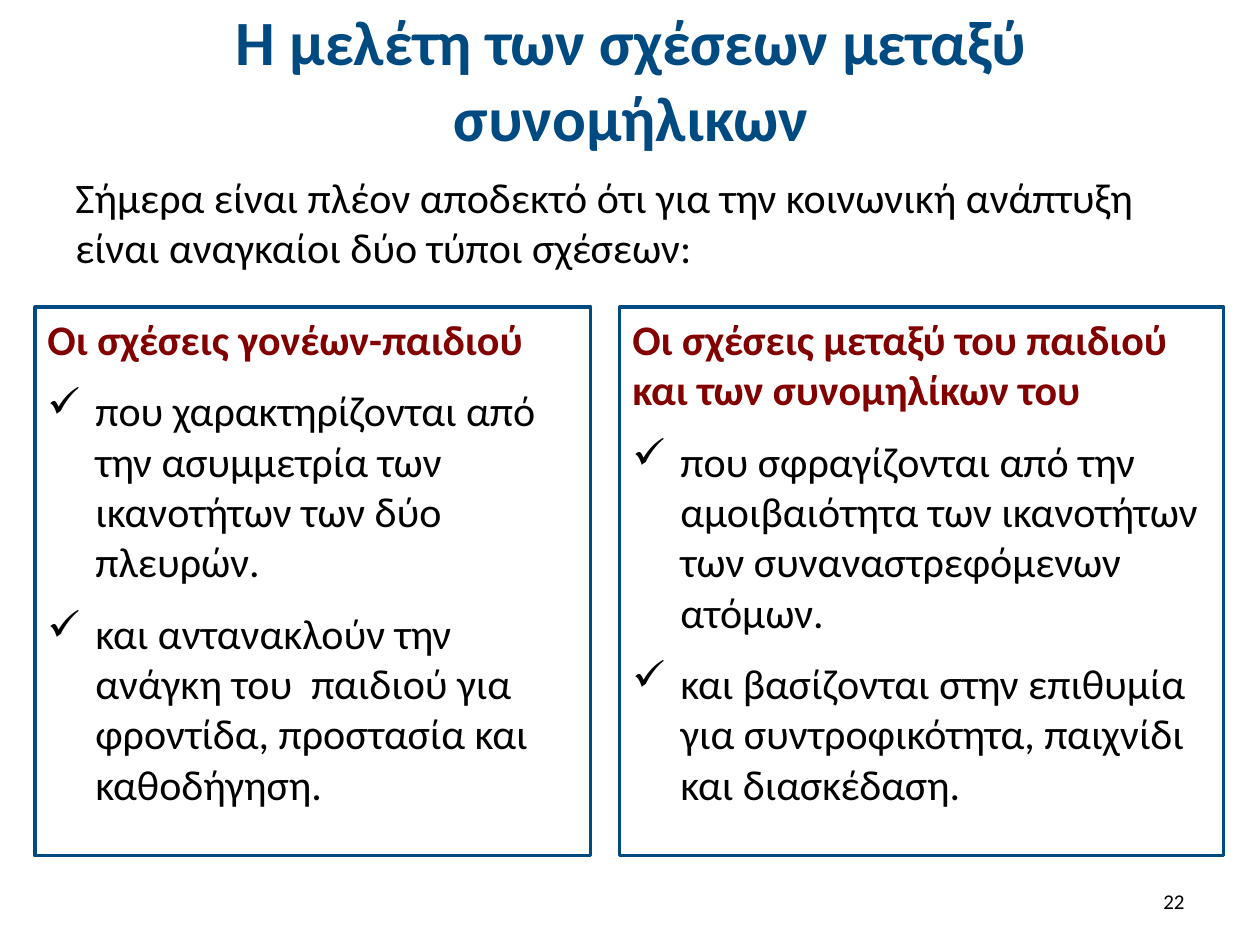
import pptx
import pptx.dml.color
import pptx.enum.shapes
import pptx.enum.text
import pptx.util
import lxml.etree

PX_PER_INCH = 126
COLORS = {"navy": "004A82", "maroon": "820000", "black": "000000"}
ALIGN = pptx.enum.text.PP_ALIGN
ANCHOR = pptx.enum.text.MSO_ANCHOR


def px(length):
    return pptx.util.Emu(round(length * pptx.util.Inches(1) / PX_PER_INCH))


def rgb(name):
    return pptx.dml.color.RGBColor.from_string(COLORS[name])


class SlideBuilder:
    font_name = "Calibri"
    bullet = "✓"
    indent = 48
    gap = pptx.util.Pt(12)
    border = pptx.util.Pt(1.75)

    def __init__(self, slide):
        self.slide = slide

    def style(self, paragraph, size, color="black", bold=False, align=ALIGN.LEFT):
        paragraph.alignment = align
        values = {"name": self.font_name, "size": pptx.util.Pt(size), "bold": bold}
        for attribute, value in values.items():
            setattr(paragraph.font, attribute, value)
        paragraph.font.color.rgb = rgb(color)

    def text(self, box, content, size, anchor=ANCHOR.TOP, **look):
        frame = self.slide.shapes.add_textbox(*map(px, box)).text_frame
        frame.word_wrap = True
        frame.vertical_anchor = anchor
        paragraph = frame.paragraphs[0]
        paragraph.text = content
        self.style(paragraph, size, **look)

    def check_item(self, frame, content):
        paragraph = frame.add_paragraph()
        paragraph.text = content
        paragraph.space_before = self.gap
        properties = paragraph._p.get_or_add_pPr()
        properties.set("marL", str(px(self.indent)))
        properties.set("indent", str(-px(self.indent)))
        mark = lxml.etree.SubElement(properties, pptx.oxml.ns.qn("a:buChar"))
        mark.set("char", self.bullet)
        self.style(paragraph, 24)

    def panel(self, box, heading, items):
        panel = self.slide.shapes.add_shape(
            pptx.enum.shapes.MSO_SHAPE.RECTANGLE, *map(px, box))
        panel.shadow.inherit = False
        panel.fill.background()
        panel.line.color.rgb = rgb("navy")
        panel.line.width = self.border
        frame = panel.text_frame
        frame.word_wrap = True
        frame.vertical_anchor = ANCHOR.TOP
        frame.paragraphs[0].text = heading
        self.style(frame.paragraphs[0], 24, "maroon", True)
        for item in items:
            self.check_item(frame, item)


def main():
    presentation = pptx.Presentation()
    presentation.slide_width = px(1260)
    presentation.slide_height = px(945)
    builder = SlideBuilder(presentation.slides.add_slide(presentation.slide_layouts[6]))

    builder.text((64, 16, 1134, 125), "Η μελέτη των σχέσεων μεταξύ συνομήλικων", 36,
                 ANCHOR.MIDDLE, color="navy", bold=True, align=ALIGN.CENTER)
    builder.text((63, 165, 1134, 118),
                 "Σήμερα είναι πλέον αποδεκτό ότι για την κοινωνική ανάπτυξη "
                 "είναι αναγκαίοι δύο τύποι σχέσεων:", 24)
    builder.text((903, 876, 294, 50), "22", 12, ANCHOR.MIDDLE, align=ALIGN.RIGHT)

    relationships = [
        (35, 556, "Οι σχέσεις γονέων-παιδιού", [
            "που χαρακτηρίζονται από την ασυμμετρία των ικανοτήτων των δύο πλευρών.",
            "και αντανακλούν την ανάγκη του  παιδιού για φροντίδα, προστασία και καθοδήγηση.",
        ]),
        (620, 604, "Οι σχέσεις μεταξύ του παιδιού και των συνομηλίκων του", [
            "που σφραγίζονται από την αμοιβαιότητα των ικανοτήτων "
            "των συναναστρεφόμενων ατόμων.",
            "και βασίζονται στην επιθυμία για συντροφικότητα, παιχνίδι και διασκέδαση.",
        ]),
    ]
    for left, width, heading, items in relationships:
        builder.panel((left, 307, width, 549), heading, items)

    presentation.save("out.pptx")


if __name__ == "__main__":
    main()
